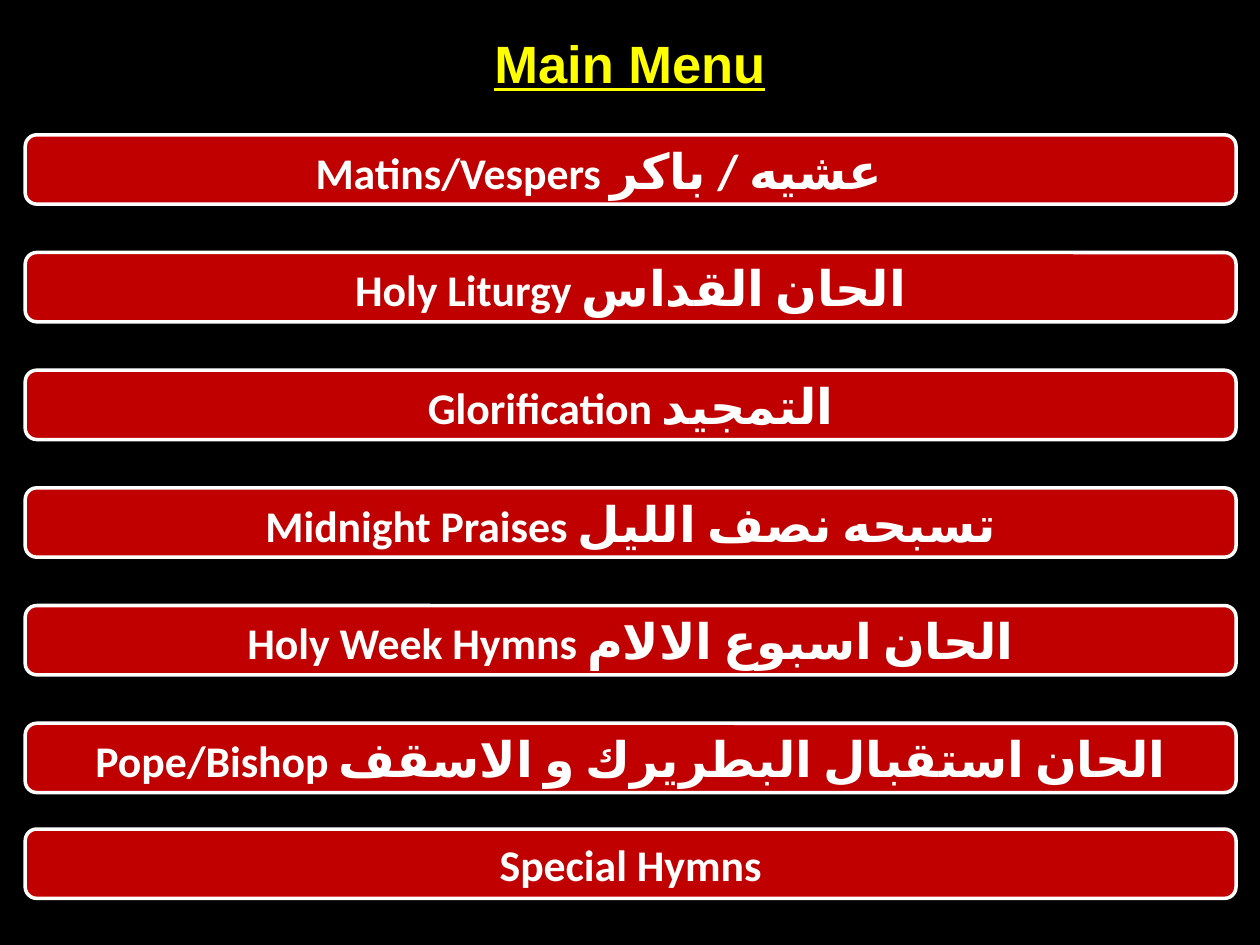
from lxml.etree import SubElement
from pptx import Presentation
from pptx.dml.color import RGBColor
from pptx.enum.lang import MSO_LANGUAGE_ID
from pptx.enum.shapes import MSO_SHAPE
from pptx.enum.text import MSO_ANCHOR, MSO_AUTO_SIZE, PP_ALIGN
from pptx.oxml.ns import qn
from pptx.util import Inches, Pt

BLACK = RGBColor(0x00, 0x00, 0x00)
RED = RGBColor(0xC0, 0x00, 0x00)
WHITE = RGBColor(0xFF, 0xFF, 0xFF)
YELLOW = RGBColor(0xFF, 0xFF, 0x00)

ENGLISH_SIZE, ARABIC_SIZE = 25, 28

# Each entry is a list of (text, size) runs
HYMN_ENTRIES = [
    [("Matins/Vespers ", ENGLISH_SIZE), ("عشيه / باكر ", ARABIC_SIZE), ("\t", ENGLISH_SIZE)],
    [("Holy Liturgy ", ENGLISH_SIZE), ("الحان القداس", ARABIC_SIZE)],
    [("Glorification ", ENGLISH_SIZE), ("التمجيد", ARABIC_SIZE)],
    [("Midnight Praises ", ENGLISH_SIZE), ("تسبحه نصف الليل", ARABIC_SIZE)],
    [("Holy Week Hymns ", ENGLISH_SIZE), ("الحان اسبوع الالام", ARABIC_SIZE)],
    [("Pope/Bishop ", ENGLISH_SIZE), ("الحان استقبال البطريرك و الاسقف", ARABIC_SIZE)],
]
SPECIAL_ENTRY = [("Special Hymns", ENGLISH_SIZE)]

FIRST_TOP, LAST_TOP, SPECIAL_TOP = 1.07, 5.74, 6.58


def style_run(run, name, size, color):
    font = run.font
    font.name = name
    font.size = Pt(size)
    font.bold = True
    font.color.rgb = color
    # Arabic letters take the complex-script typeface
    SubElement(run._r.get_or_add_rPr(), qn("a:cs")).set("typeface", name)


def add_title(slide, text):
    title = slide.shapes.add_textbox(Inches(3.81), Inches(0.2), Inches(2.38), Inches(0.61))
    frame = title.text_frame
    frame.word_wrap = False
    frame.auto_size = MSO_AUTO_SIZE.SHAPE_TO_FIT_TEXT
    frame.text = text
    heading = frame.paragraphs[0]
    heading.alignment = PP_ALIGN.CENTER
    style_run(heading.runs[0], "Arial", 30, YELLOW)
    heading.runs[0].font.underline = True


def add_menu_button(slide, top, entry):
    button = slide.shapes.add_shape(
        MSO_SHAPE.ROUNDED_RECTANGLE, Inches(0.2), Inches(top), Inches(9.61), Inches(0.55))
    button.shadow.inherit = False
    button.fill.solid()
    button.fill.fore_color.rgb = RED
    button.line.color.rgb = WHITE
    button.line.width = Pt(2)
    frame = button.text_frame
    frame.word_wrap = True
    frame.vertical_anchor = MSO_ANCHOR.MIDDLE
    label = frame.paragraphs[0]
    label.alignment = PP_ALIGN.CENTER
    for text, size in entry:
        run = label.add_run()
        run.text = text
        style_run(run, "Calibri", size, WHITE)
        if size == ARABIC_SIZE:
            run.font.language_id = MSO_LANGUAGE_ID.ARABIC_EGYPT


def main():
    prs = Presentation()
    prs.slide_width, prs.slide_height = Inches(10), Inches(7.5)
    slide = prs.slides.add_slide(prs.slide_layouts[6])
    slide.background.fill.solid()
    slide.background.fill.fore_color.rgb = BLACK

    add_title(slide, "Main Menu")

    # Evenly spaced hymn buttons
    pitch = (LAST_TOP - FIRST_TOP) / (len(HYMN_ENTRIES) - 1)
    for index, entry in enumerate(HYMN_ENTRIES):
        add_menu_button(slide, FIRST_TOP + index * pitch, entry)

    # The last button sits closer to the one above
    add_menu_button(slide, SPECIAL_TOP, SPECIAL_ENTRY)

    prs.save("out.pptx")


if __name__ == "__main__":
    main()
